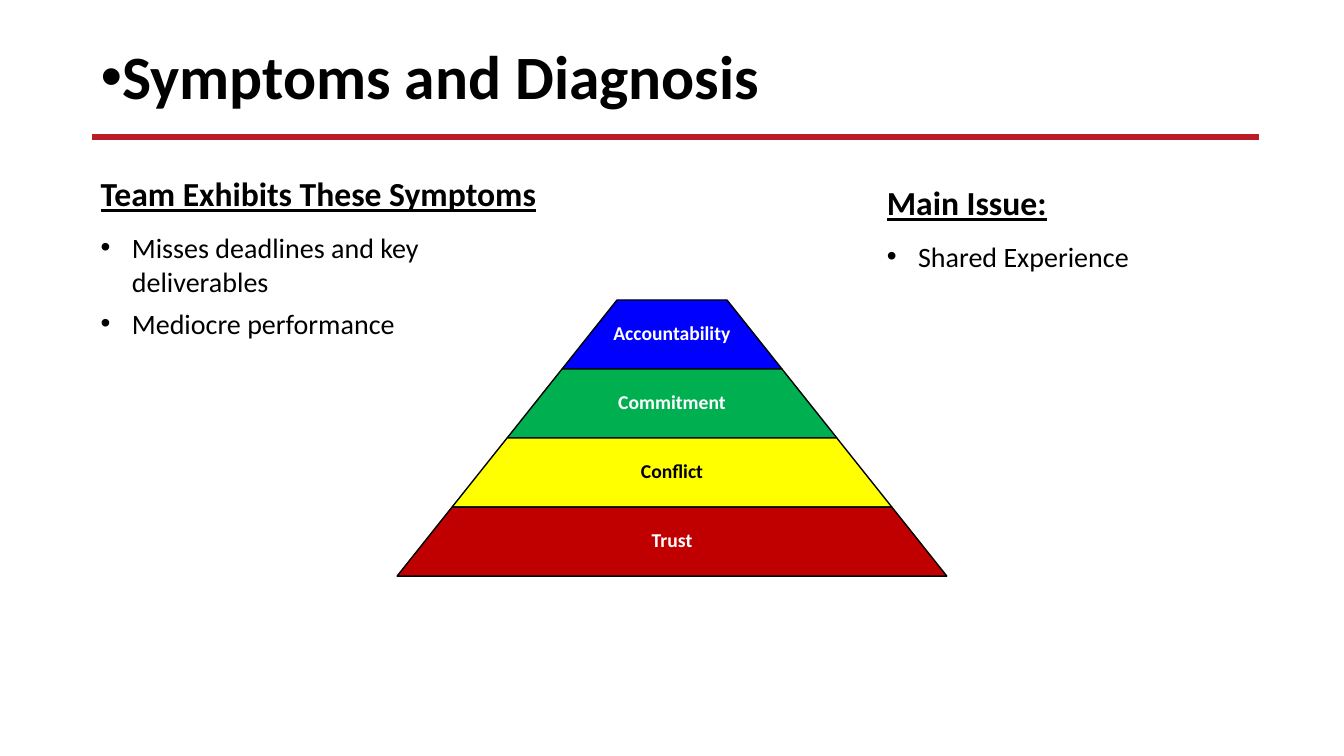
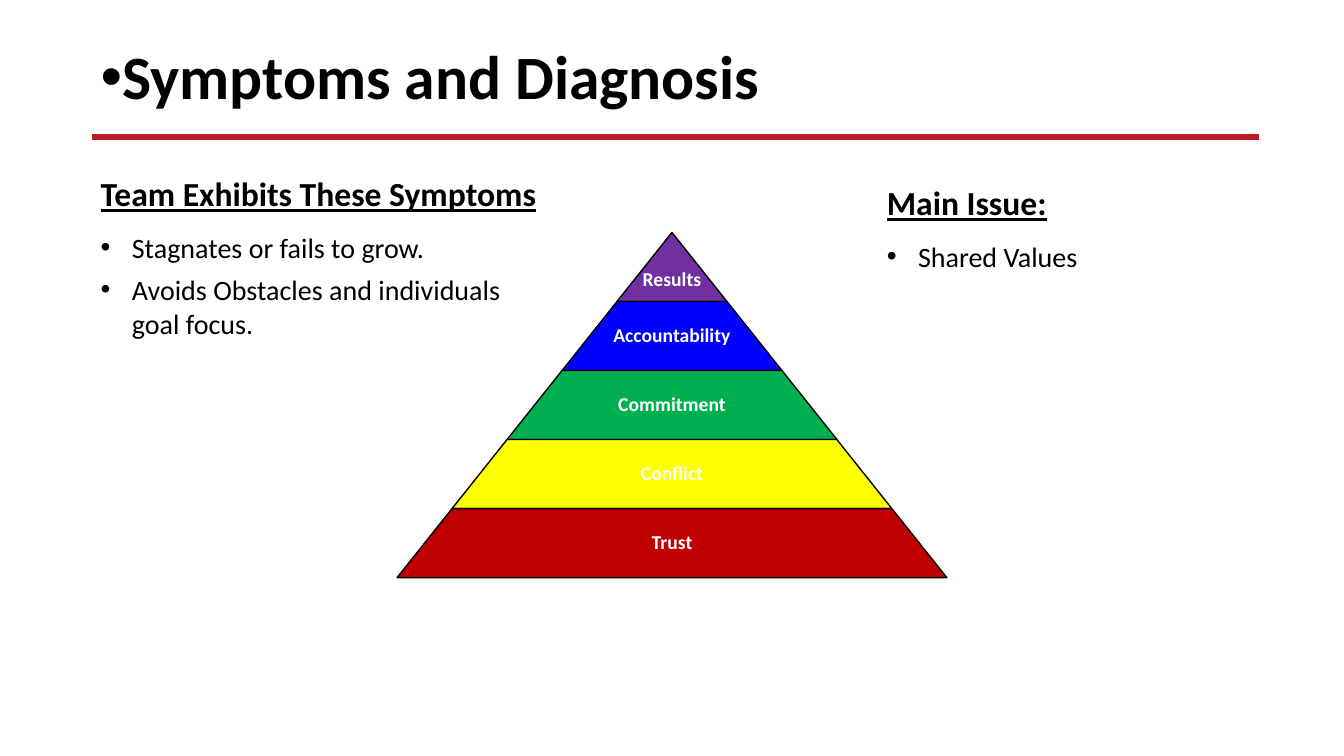
from dataclasses import dataclass
from typing import Any

from lxml.etree import SubElement
from pptx import Presentation
from pptx.dml.color import RGBColor
from pptx.enum.shapes import MSO_CONNECTOR, MSO_SHAPE
from pptx.enum.text import MSO_ANCHOR, MSO_AUTO_SIZE, PP_ALIGN
from pptx.oxml.ns import qn
from pptx.util import Inches, Length, Pt

SLIDE_WIDTH = Inches(13.33)
SLIDE_HEIGHT = Inches(7.5)
FONT = "Calibri"
BLACK, WHITE, RULE_RED = "000000", "FFFFFF", "BB1D28"
TITLE = "Symptoms and Diagnosis"
TIER_COUNT = 5
TIER_ROW = 9.13
TIER_STEP = 4.09
LABEL_SHARE = 0.65

TITLE_FORMAT = {"size": Pt(44), "bold": True}
HEADING_FORMAT = {"size": Pt(24), "bold": True, "underline": True}
BULLET_FORMAT = {"size": Pt(20), "bold": False, "underline": False}
LABEL_FORMAT = {"size": Pt(14), "bold": True}


@dataclass(frozen=True)
class Box:
    """A rectangle in percent of the slide's width and height."""
    left: float
    top: float
    width: float
    height: float


@dataclass(frozen=True)
class Tier:
    """One level of the pyramid."""
    label: str
    fill: str
    color: str = WHITE


@dataclass(frozen=True)
class Diagnosis:
    """The content of one slide."""
    symptoms: tuple[str, ...]
    issue: str
    tiers: tuple[Tier, ...]
    base: float


TITLE_BOX = Box(6.75, 5.47, 67.5, 12.27)
SYMPTOM_BOX = Box(6.75, 22.27, 34.43, 23.6)
ISSUE_BOX = Box(65.25, 23.47, 19.73, 13.47)

TRUST = Tier("Trust", "C00000")
COMMITMENT = Tier("Commitment", "00B050")
ACCOUNTABILITY = Tier("Accountability", "0000FF")

DIAGNOSES = (
    Diagnosis(
        ("Misses deadlines and key deliverables", "Mediocre performance"),
        "Shared Experience",
        (TRUST, Tier("Conflict", "FFFF00", BLACK), COMMITMENT, ACCOUNTABILITY),
        76.2,
    ),
    Diagnosis(
        ("Stagnates or fails to grow.", "Avoids Obstacles and individuals goal focus."),
        "Shared Values",
        (TRUST, Tier("Conflict", "FFFF00"), COMMITMENT, ACCOUNTABILITY,
         Tier("Results", "7030A0")),
        76.4,
    ),
)


def rgb(color: str) -> RGBColor:
    """Turn a hex string into a colour."""
    return RGBColor.from_string(color)


def across(percent: float) -> Length:
    """Return a share of the slide's width."""
    return Length(round(SLIDE_WIDTH * percent / 100))


def down(percent: float) -> Length:
    """Return a share of the slide's height."""
    return Length(round(SLIDE_HEIGHT * percent / 100))


def place(box: Box) -> tuple[Length, ...]:
    """Return the left, top, width and height of a box."""
    return across(box.left), down(box.top), across(box.width), down(box.height)


def apply(target: Any, values: dict[str, Any]) -> None:
    """Set each named attribute on the target."""
    for name, value in values.items():
        setattr(target, name, value)


def add_bullet(paragraph: Any, indent: Length) -> None:
    """Give a paragraph a round bullet with a hanging indent."""
    properties = paragraph._p.get_or_add_pPr()
    properties.set("marL", str(indent))
    properties.set("indent", str(-indent))
    SubElement(properties, qn("a:buFont"), typeface="Arial")
    SubElement(properties, qn("a:buChar"), char="•")


def write(paragraph: Any, text: str, values: dict[str, Any], color: str = BLACK) -> None:
    """Write one formatted run into a paragraph."""
    run = paragraph.add_run()
    run.text = text
    apply(run.font, {"name": FONT, **values})
    run.font.color.rgb = rgb(color)


def add_rule(slide: Any) -> None:
    """Draw the line below the title."""
    rule = slide.shapes.add_connector(
        MSO_CONNECTOR.STRAIGHT, across(6.83), down(18.13), across(93.68), down(18.13))
    rule.line.color.rgb = rgb(RULE_RED)
    rule.line.width = Pt(4.5)
    SubElement(rule._element.spPr, qn("a:effectLst"))


def add_title(slide: Any) -> None:
    """Write the bulleted title."""
    frame = slide.shapes.add_textbox(*place(TITLE_BOX)).text_frame
    frame.word_wrap = True
    paragraph = frame.paragraphs[0]
    add_bullet(paragraph, Length(0))
    paragraph.line_spacing = 0.9
    write(paragraph, TITLE, TITLE_FORMAT)


def add_list(slide: Any, box: Box, heading: str, items: tuple[str, ...], wrap: bool) -> None:
    """Write an underlined heading with bullets below it."""
    frame = slide.shapes.add_textbox(*place(box)).text_frame
    apply(frame, {"word_wrap": wrap, "auto_size": MSO_AUTO_SIZE.SHAPE_TO_FIT_TEXT})
    paragraph = frame.paragraphs[0]
    paragraph.space_after = Pt(12)
    write(paragraph, heading, HEADING_FORMAT)
    for item in items:
        paragraph = frame.add_paragraph()
        add_bullet(paragraph, Inches(0.31))
        paragraph.space_after = Pt(6)
        write(paragraph, item, BULLET_FORMAT)


def add_tier(slide: Any, tier: Tier, level: int, base: float) -> None:
    """Draw one pyramid level, counted up from the base, and its label."""
    width = 2 * TIER_STEP * (TIER_COUNT - level)
    top = base - TIER_ROW * (level + 1)
    shape = slide.shapes.add_shape(
        MSO_SHAPE.TRAPEZOID, *place(Box(50 - width / 2, top, width, TIER_ROW)))
    shape.shadow.inherit = False
    shape.adjustments[0] = across(TIER_STEP) / down(TIER_ROW)
    shape.fill.solid()
    shape.fill.fore_color.rgb = rgb(tier.fill)
    shape.line.color.rgb = rgb(BLACK)
    shape.line.width = Pt(1)

    is_tip = level == TIER_COUNT - 1
    label_width = width if is_tip else width * LABEL_SHARE
    label_box = Box(50 - label_width / 2, top, label_width, TIER_ROW)
    frame = slide.shapes.add_textbox(*place(label_box)).text_frame
    margin = Inches(0.02)
    apply(frame, {
        "word_wrap": True,
        "vertical_anchor": MSO_ANCHOR.MIDDLE,
        "margin_left": margin,
        "margin_right": margin,
        "margin_top": Inches(0.28) if is_tip else margin,
        "margin_bottom": margin,
    })
    paragraph = frame.paragraphs[0]
    apply(paragraph, {"alignment": PP_ALIGN.CENTER, "line_spacing": 0.9})
    write(paragraph, tier.label, LABEL_FORMAT, tier.color)


def add_diagnosis(presentation: Any, diagnosis: Diagnosis) -> None:
    """Build one slide."""
    slide = presentation.slides.add_slide(presentation.slide_layouts[6])
    add_rule(slide)
    add_list(slide, SYMPTOM_BOX, "Team Exhibits These Symptoms", diagnosis.symptoms, True)
    add_list(slide, ISSUE_BOX, "Main Issue:", (diagnosis.issue,), False)
    for level, tier in reversed(tuple(enumerate(diagnosis.tiers))):
        add_tier(slide, tier, level, diagnosis.base)
    add_title(slide)


def main() -> None:
    """Build and save the presentation."""
    presentation = Presentation()
    apply(presentation, {"slide_width": SLIDE_WIDTH, "slide_height": SLIDE_HEIGHT})
    for diagnosis in DIAGNOSES:
        add_diagnosis(presentation, diagnosis)
    presentation.save("out.pptx")


if __name__ == "__main__":
    main()
